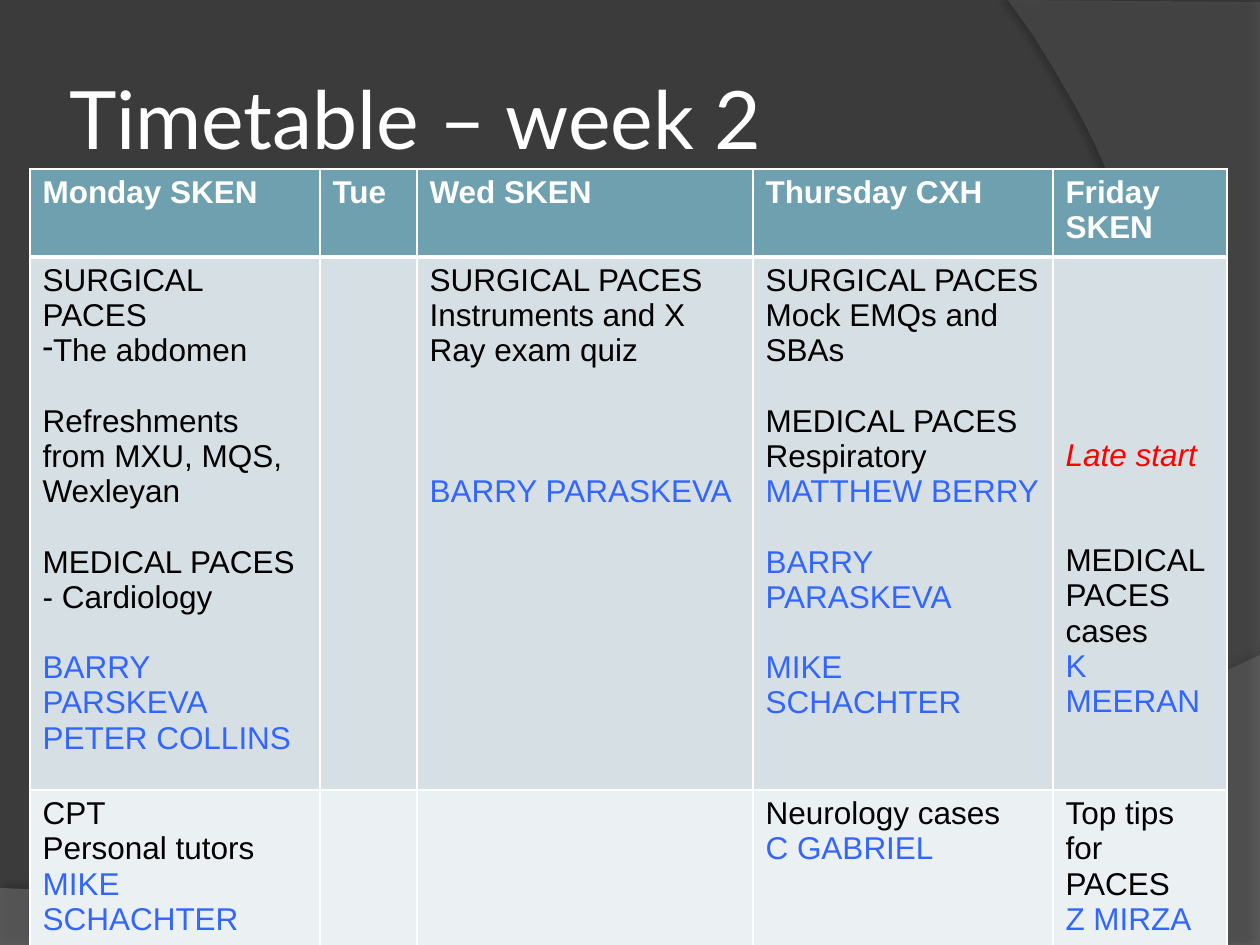
from lxml import etree
from pptx import Presentation
from pptx.dml.color import RGBColor
from pptx.enum.text import MSO_ANCHOR
from pptx.oxml.ns import qn
from pptx.util import Emu, Pt

MIDDLE = MSO_ANCHOR.MIDDLE
SCALE = 914400 / 126
LINE = 35
INSET = 6

BLACK = RGBColor(0x00, 0x00, 0x00)
WHITE = RGBColor(0xFF, 0xFF, 0xFF)
BLUE = RGBColor(0x33, 0x66, 0xFF)
RED = RGBColor(0xFF, 0x00, 0x00)
DARK = RGBColor(0x3B, 0x3B, 0x3B)
GREY = RGBColor(0x7F, 0x7F, 0x7F)
SLATE = RGBColor(0x5E, 0x5E, 0x5E)
TEAL = RGBColor(0x6E, 0xA0, 0xB0)
MIST = RGBColor(0xD5, 0xDF, 0xE4)
PALE = RGBColor(0xEB, 0xF0, 0xF2)

COLS = [290, 97, 336, 300, 174]
ROWS = [83, 506, 242]
FILLS = [TEAL, MIST, PALE]
HEADS = ["Monday SKEN", "Tue", "Wed SKEN", "Thursday CXH", "Friday SKEN"]

# Each entry: text, colour, empty lines above it
BODY = [
    [
        [("SURGICAL PACES", BLACK, 0), ("The abdomen", BLACK, 0),
         ("Refreshments from MXU, MQS, Wexleyan", BLACK, 1),
         ("MEDICAL PACES", BLACK, 1), ("- Cardiology", BLACK, 0),
         ("BARRY PARSKEVA", BLUE, 1), ("PETER COLLINS", BLUE, 0)],
        [],
        [("SURGICAL PACES", BLACK, 0),
         ("Instruments and X Ray exam quiz", BLACK, 0),
         ("BARRY PARASKEVA", BLUE, 3)],
        [("SURGICAL PACES", BLACK, 0), ("Mock EMQs and SBAs", BLACK, 0),
         ("MEDICAL PACES", BLACK, 1), ("Respiratory", BLACK, 0),
         ("MATTHEW BERRY", BLUE, 0), ("BARRY PARASKEVA", BLUE, 1),
         ("MIKE SCHACHTER", BLUE, 1)],
        [("Late start", RED, 5), ("MEDICAL PACES cases", BLACK, 2),
         ("K MEERAN", BLUE, 0)],
    ],
    [
        [("CPT", BLACK, 0), ("Personal tutors", BLACK, 0),
         ("MIKE SCHACHTER", BLUE, 0)],
        [],
        [],
        [("Neurology cases", BLACK, 0), ("C GABRIEL", BLUE, 0)],
        [("Top tips for PACES", BLACK, 0), ("Z MIRZA", BLUE, 0)],
    ],
]
BULLETS = {"The abdomen"}


def px(num):
    return Emu(round(num * SCALE))


def node(top, tag, **attrs):
    item = etree.SubElement(top, qn(tag))
    for key, val in attrs.items():
        item.set(key, str(val))
    return item


def curve(ends, steps=32):
    for i in range(steps + 1):
        t = i / steps
        u = 1 - t
        rates = (u ** 3, 3 * u * u * t, 3 * u * t * t, t ** 3)
        yield tuple(round(sum(r * p[k] for r, p in zip(rates, ends)))
                    for k in (0, 1))


def sweep(slide, box, arc, edge, color, alpha, shade):
    x, y = box
    dots = [(x + a, y + b) for a, b in [*curve(arc), *edge]]
    pen = slide.shapes.build_freeform(*dots[0], scale=SCALE)
    pen.add_line_segments(dots[1:], close=True)
    shape = pen.convert_to_shape()
    shape.fill.solid()
    shape.fill.fore_color.rgb = color
    shape.line.fill.background()
    shape.shadow.inherit = False
    props = shape._element.spPr
    node(props.find(qn("a:solidFill"))[0], "a:alpha", val=alpha * 1000)
    depth, blur, dist, turn = shade
    glow = node(props.find(qn("a:effectLst")), "a:outerShdw",
                blurRad=Pt(blur), dist=Pt(dist), dir=turn * 60000,
                algn="ctr", rotWithShape=0)
    tint = node(glow, "a:srgbClr", val=BLACK)
    node(tint, "a:alpha", val=depth * 1000)


def add_run(para, text, size, font, color, bold=False, slant=False):
    run = para.add_run()
    run.text = text
    run.font.size = Pt(size)
    run.font.name = font
    run.font.color.rgb = color
    run.font.bold = bold
    run.font.italic = slant


def title(slide, box):
    frame = slide.shapes.add_textbox(*map(px, box)).text_frame
    frame.word_wrap = True
    frame.vertical_anchor = MIDDLE
    frame.margin_left = frame.margin_right = px(INSET)
    frame.margin_top = frame.margin_bottom = px(INSET)
    add_run(frame.paragraphs[0], "Timetable – week 2", 46, "Lato", WHITE)


def border(cell, top, low):
    props = cell._tc.get_or_add_tcPr()
    sides = (("a:lnL", 1), ("a:lnR", 1), ("a:lnT", top), ("a:lnB", low))
    for i, (tag, width) in enumerate(sides):
        line = node(props, tag, w=Pt(width))
        node(node(line, "a:solidFill"), "a:srgbClr", val=WHITE)
        props.insert(i, line)


def fill_cell(cell, lines, head):
    frame = cell.text_frame
    for i, (text, color, gap) in enumerate(lines):
        para = frame.add_paragraph() if i else frame.paragraphs[0]
        if i:
            para.space_before = px(gap * LINE)
        else:
            cell.margin_top = px(INSET + gap * LINE)
        if text in BULLETS:
            props = para._p.get_or_add_pPr()
            props.set("marL", "0")
            props.set("indent", "0")
            node(props, "a:buChar", char="-")
        add_run(para, text, 18, "Arial", color, head, color == RED)


def timetable(slide, box):
    grid = [[[(text, WHITE, 0)] for text in HEADS], *BODY]
    size = (sum(COLS), sum(ROWS))
    table = slide.shapes.add_table(len(ROWS), len(COLS),
                                   *map(px, (*box, *size))).table
    table.first_row = table.horz_banding = False
    for col, width in zip(table.columns, COLS):
        col.width = px(width)
    for i, (row, height) in enumerate(zip(table.rows, ROWS)):
        row.height = px(height)
        for cell, lines in zip(row.cells, grid[i]):
            cell.fill.solid()
            cell.fill.fore_color.rgb = FILLS[i]
            border(cell, 3 if i == 1 else 1, 3 if i == 0 else 1)
            fill_cell(cell, lines, i == 0)


def main():
    deck = Presentation()
    deck.slide_width, deck.slide_height = px(1260), px(945)
    slide = deck.slides.add_slide(deck.slide_layouts[6])
    slide.background.fill.solid()
    slide.background.fill.fore_color.rgb = DARK
    sweep(slide, (0, 655), [(1260, 0), (704, 264), (493, 251), (0, 233)],
          [(0, 290), (1260, 290)], GREY, 45, (35, 4, 3.5, 270))
    sweep(slide, (1008, 0), [(26, 945), (170, 780), (275, 378), (0, 0)],
          [(252, 2), (252, 945)], SLATE, 40, (45, 4, 4, 180))
    title(slide, (63, 38, 1029, 158))
    timetable(slide, (30, 169))
    deck.save("out.pptx")


if __name__ == "__main__":
    main()
